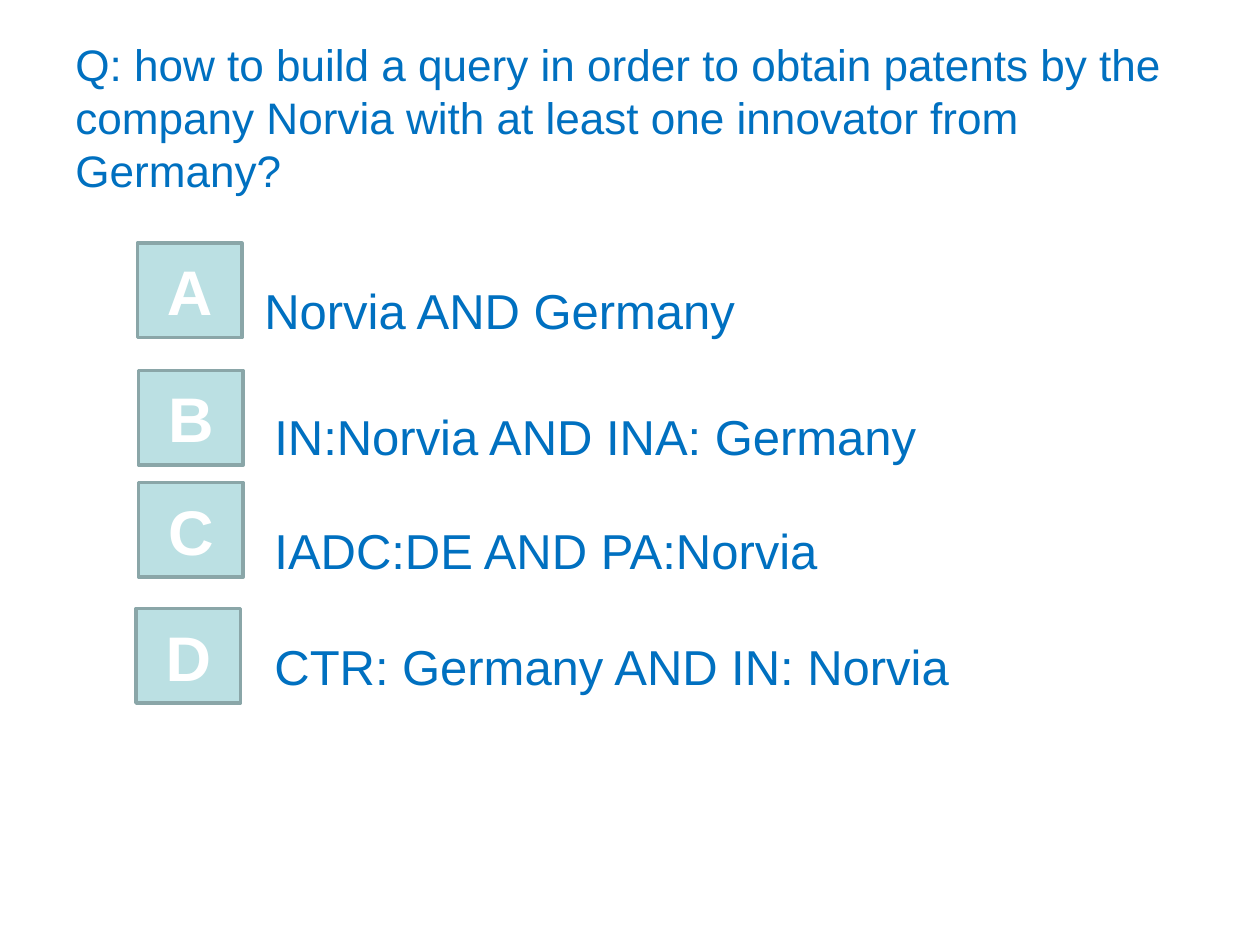
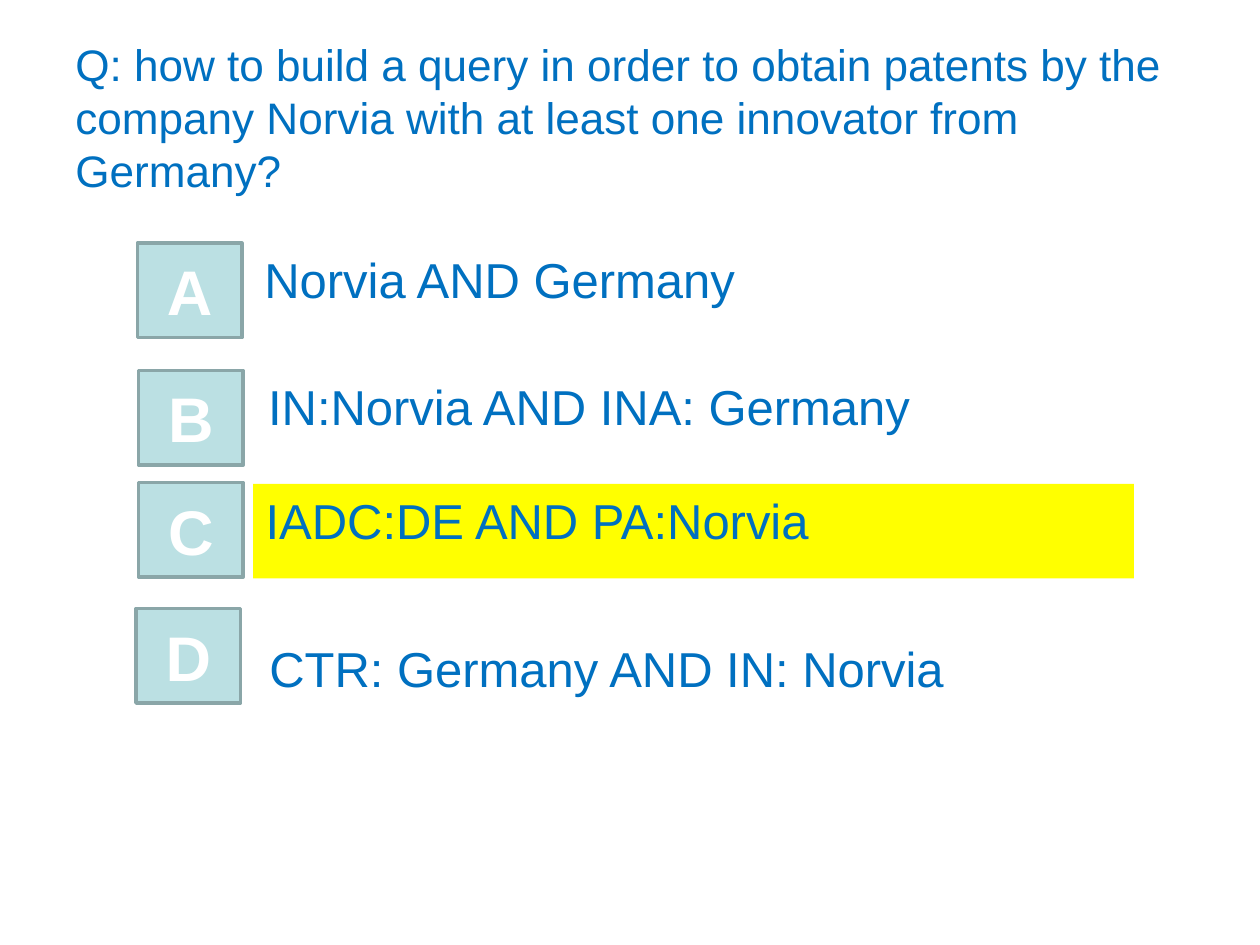
import pptx
import pptx.dml.color
import pptx.enum.shapes
import pptx.enum.text
import pptx.util

RGBColor = pptx.dml.color.RGBColor
SHAPE = pptx.enum.shapes.MSO_SHAPE
ALIGN = pptx.enum.text.PP_ALIGN
ANCHOR = pptx.enum.text.MSO_ANCHOR

BLUE = RGBColor(0x00, 0x70, 0xC0)
PALE_TEAL = RGBColor(0xBB, 0xE0, 0xE3)
GREY_TEAL = RGBColor(0x8A, 0xA6, 0xA8)
WHITE = RGBColor(0xFF, 0xFF, 0xFF)
YELLOW = RGBColor(0xFF, 0xFF, 0x00)

FONT = "Arial"
PX_PER_INCH = 100
EMU_PER_PX = 914400 // PX_PER_INCH

QUESTION = ("Q: how to build a query in order to obtain patents by the company "
            "Norvia with at least one innovator from Germany?")
QUESTION_BOX = (50, 30, 900, 125)
ANSWERS = {
    "A": "Norvia AND Germany",
    "B": "IN:Norvia AND INA: Germany",
    "C": "IADC:DE AND PA:Norvia",
    "D": "CTR: Germany AND IN: Norvia",
}
CORRECT = "C"
BUTTON_SIZE = (83, 75)
BUTTON_CORNERS = {"A": (109, 193), "B": (110, 294), "C": (110, 383), "D": (108, 483)}

# Answer boxes, each as an offset from its button's corner and a size
ASKING_BOXES = {
    "A": (91, 25, 600, 55),
    "B": (98, 24, 576, 57),
    "C": (98, 25, 592, 57),
    "D": (100, 17, 592, 57),
}
SOLVED_BOXES = {
    "A": (91, 0, 650, 80),
    "B": (93, 0, 683, 75),
    "C": (91, 1, 699, 75),
    "D": (96, 19, 713, 57),
}


def to_emu(*lengths):
    return [pptx.util.Emu(length * EMU_PER_PX) for length in lengths]


def write_text(shape, text, size, color, bold=False, align=ALIGN.LEFT, anchor=ANCHOR.TOP):
    frame = shape.text_frame
    frame.word_wrap = True
    frame.vertical_anchor = anchor
    paragraph = frame.paragraphs[0]
    paragraph.alignment = align
    run = paragraph.add_run()
    run.text = text
    run.font.name = FONT
    run.font.size = pptx.util.Pt(size)
    run.font.bold = bold
    run.font.color.rgb = color


def add_question(slide, box):
    shape = slide.shapes.add_textbox(*to_emu(*box))
    write_text(shape, QUESTION, 25.2, BLUE, anchor=ANCHOR.MIDDLE)


def add_letter_button(slide, letter, box):
    button = slide.shapes.add_shape(SHAPE.ACTION_BUTTON_CUSTOM, *to_emu(*box))
    button.shadow.inherit = False
    button.fill.solid()
    button.fill.fore_color.rgb = PALE_TEAL
    button.line.color.rgb = GREY_TEAL
    button.line.width = pptx.util.Pt(2)
    write_text(button, letter, 36, WHITE, True, ALIGN.CENTER, ANCHOR.MIDDLE)


def add_answer(slide, text, box, highlighted):
    if highlighted:
        shape = slide.shapes.add_shape(SHAPE.RECTANGLE, *to_emu(*box))
        shape.shadow.inherit = False
        shape.fill.solid()
        shape.fill.fore_color.rgb = YELLOW
        shape.line.fill.background()
    else:
        shape = slide.shapes.add_textbox(*to_emu(*box))
    write_text(shape, text, 28, BLUE)


def add_quiz_slide(presentation, answer_boxes, highlighted_letter=None):
    slide = presentation.slides.add_slide(presentation.slide_layouts[6])
    add_question(slide, QUESTION_BOX)
    for letter, answer in ANSWERS.items():
        left, top = BUTTON_CORNERS[letter]
        offset_x, offset_y, width, height = answer_boxes[letter]
        answer_box = (left + offset_x, top + offset_y, width, height)
        add_answer(slide, answer, answer_box, letter == highlighted_letter)
        add_letter_button(slide, letter, (left, top, *BUTTON_SIZE))


def main():
    presentation = pptx.Presentation()
    presentation.slide_width, presentation.slide_height = to_emu(1000, 750)
    add_quiz_slide(presentation, ASKING_BOXES)
    add_quiz_slide(presentation, SOLVED_BOXES, CORRECT)
    presentation.save("out.pptx")


if __name__ == "__main__":
    main()
